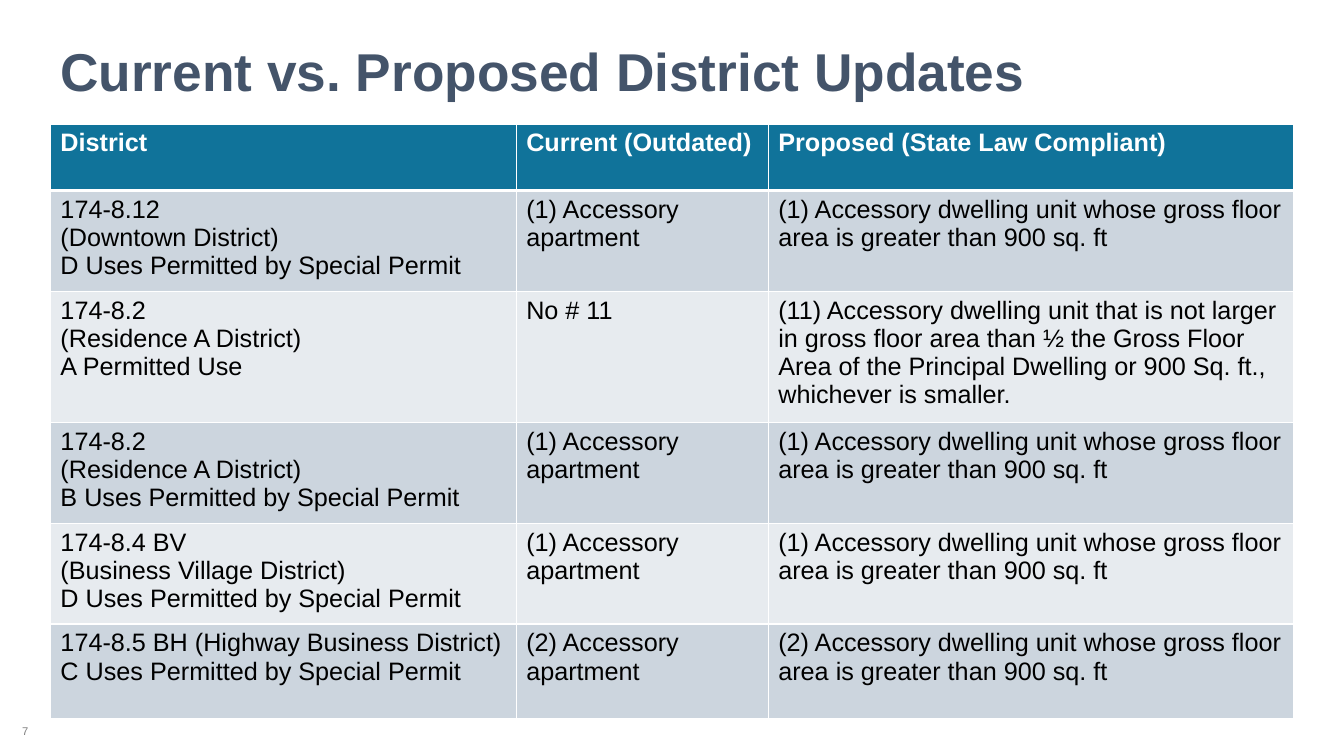
from lxml import etree
from pptx import Presentation
from pptx.dml.color import RGBColor
from pptx.enum.text import MSO_ANCHOR as Anchor, PP_ALIGN as Align
from pptx.oxml.ns import qn
from pptx.util import Inches, Pt

WHITE = RGBColor(0xFF, 0xFF, 0xFF)
BLACK = RGBColor(0x00, 0x00, 0x00)
SLATE = RGBColor(0x44, 0x54, 0x6A)
GRAY = RGBColor(0x80, 0x80, 0x80)
TEAL = RGBColor(0x10, 0x73, 0x9A)
BANDS = (RGBColor(0xCC, 0xD5, 0xDE), RGBColor(0xE7, 0xEB, 0xEF))

APARTMENT = "Accessory apartment"
LARGE_UNIT = "Accessory dwelling unit whose gross floor area is greater than 900 sq. ft"
HEADINGS = ("District", "Current (Outdated)", "Proposed (State Law Compliant)")
DISTRICTS = (
    ("174-8.12\n(Downtown District)\nD Uses Permitted by Special Permit",
     f"(1) {APARTMENT}", f"(1) {LARGE_UNIT}"),
    ("174-8.2\n(Residence A District)\nA Permitted Use",
     "No # 11",
     "(11) Accessory dwelling unit that is not larger in gross floor area than "
     "½ the Gross Floor Area of the Principal Dwelling or 900 Sq. ft., "
     "whichever is smaller."),
    ("174-8.2\n(Residence A District)\nB Uses Permitted by Special Permit",
     f"(1) {APARTMENT}", f"(1) {LARGE_UNIT}"),
    ("174-8.4 BV\n(Business Village District)\nD Uses Permitted by Special Permit",
     f"(1) {APARTMENT}", f"(1) {LARGE_UNIT}"),
    ("174-8.5 BH (Highway Business District)\nC Uses Permitted by Special Permit",
     f"(2) {APARTMENT}", f"(2) {LARGE_UNIT}"),
)
COLUMN_WIDTHS = (4.62, 2.5, 5.21)
ROW_HEIGHTS = (0.66, 0.94, 1.22, 0.94, 0.94, 0.94)


class SlideBuilder:
    font_name = "Arial"

    def __init__(self, slide):
        self.slide = slide

    def style(self, frame, size, color, bold=False):
        for paragraph in frame.paragraphs:
            for run in paragraph.runs:
                run.font.name = self.font_name
                run.font.size = Pt(size)
                run.font.bold = bold
                run.font.color.rgb = color

    def text(self, words, box, size, color, bold=False, align=Align.LEFT, spacing=1.0):
        frame = self.slide.shapes.add_textbox(*map(Inches, box)).text_frame
        frame.word_wrap = True
        frame.vertical_anchor = Anchor.MIDDLE
        frame.text = words
        frame.paragraphs[0].alignment = align
        frame.paragraphs[0].line_spacing = spacing
        self.style(frame, size, color, bold)

    def borders(self, cell, widths):
        properties = cell._tc.get_or_add_tcPr()
        for side, width in widths.items():
            line = etree.SubElement(properties, qn(f"a:ln{side}"), w=str(Pt(width)))
            fill = etree.SubElement(line, qn("a:solidFill"))
            etree.SubElement(fill, qn("a:srgbClr"), val=str(WHITE))

    def table(self, rows, left, top, widths, heights):
        box = map(Inches, (left, top, sum(widths), sum(heights)))
        table = self.slide.shapes.add_table(len(rows), len(widths), *box).table
        for column, width in zip(table.columns, widths):
            column.width = Inches(width)
        for row, height in zip(table.rows, heights):
            row.height = Inches(height)
        for r, row in enumerate(rows):
            header = r == 0
            for c, words in enumerate(row):
                cell = table.cell(r, c)
                cell.text_frame.text = words
                self.style(cell.text_frame, 18, WHITE if header else BLACK, header)
                # Heavier rule between the header and the first district
                self.borders(cell, {"L": 1, "R": 1, "T": 3 if r == 1 else 1,
                                    "B": 3 if header else 1})
                cell.fill.solid()
                cell.fill.fore_color.rgb = TEAL if header else BANDS[(r - 1) % 2]


def main():
    deck = Presentation()
    deck.slide_width, deck.slide_height = Inches(13.33), Inches(7.5)
    builder = SlideBuilder(deck.slides.add_slide(deck.slide_layouts[6]))

    # Title
    builder.text("Current vs. Proposed District Updates", (0.5, 0.26, 12.33, 0.96),
                 38, SLATE, bold=True, spacing=0.9)
    # District comparison
    builder.table((HEADINGS, *DISTRICTS), 0.5, 1.23, COLUMN_WIDTHS, ROW_HEIGHTS)
    # Slide number
    builder.text("7", (0, 7, 0.5, 0.5), 8, GRAY, align=Align.CENTER)

    deck.save("out.pptx")


if __name__ == "__main__":
    main()
